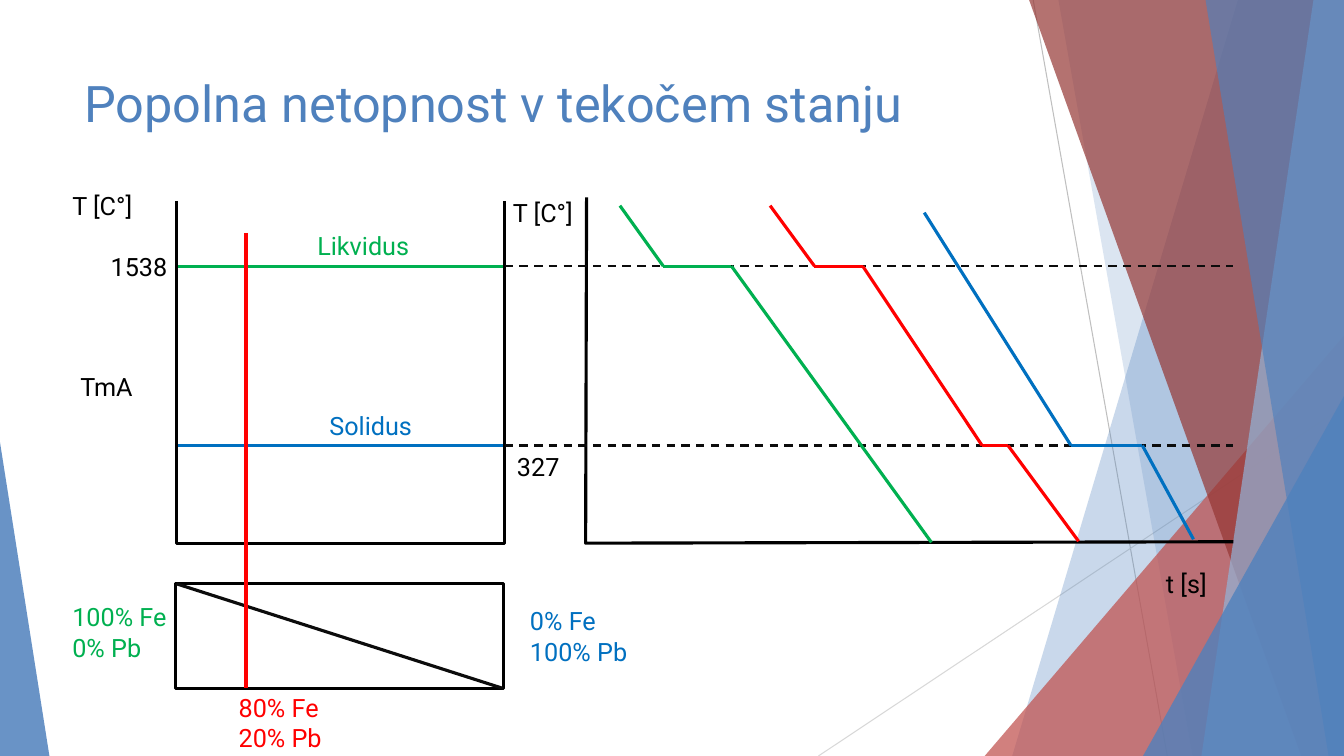
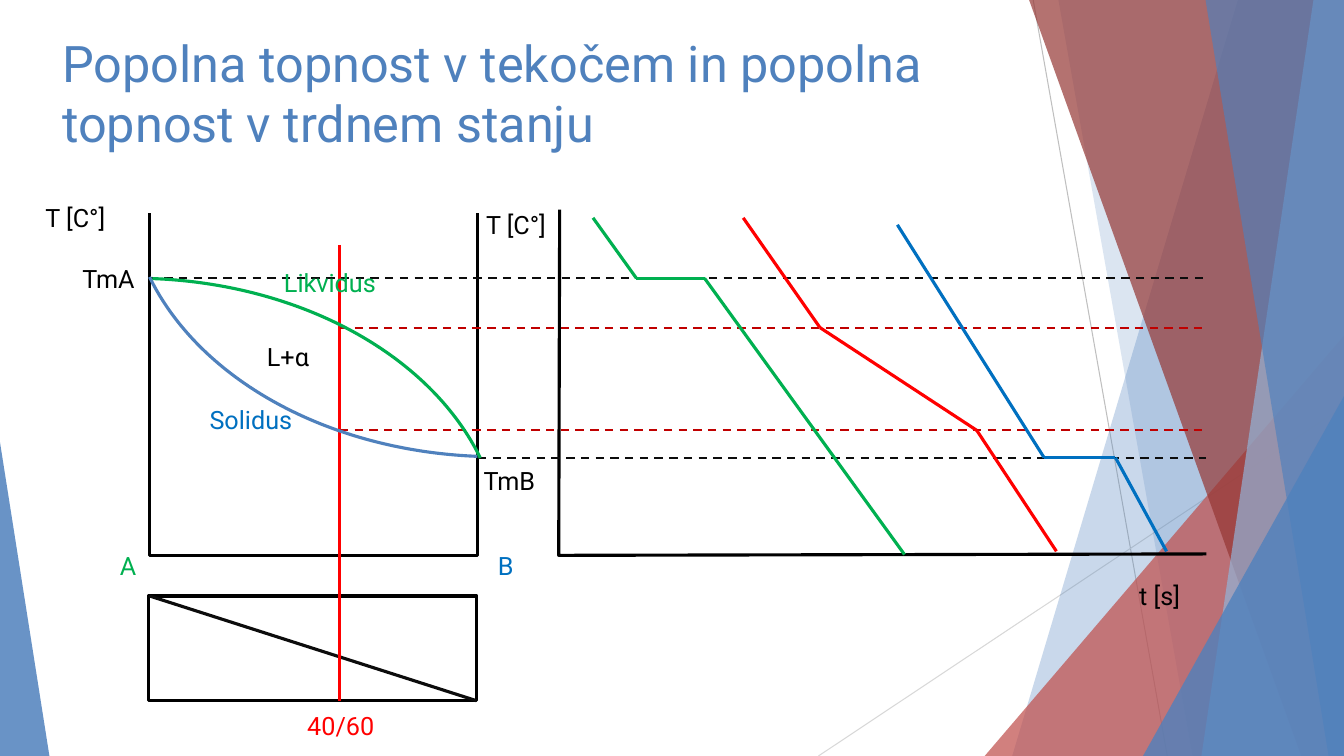
import itertools

import pptx
import pptx.dml.color
import pptx.enum.dml
import pptx.enum.shapes
import pptx.util
from lxml import etree

Pt = pptx.util.Pt
SHAPE = pptx.enum.shapes.MSO_SHAPE
DASH = pptx.enum.dml.MSO_LINE.DASH
DRAWING = "http://schemas.openxmlformats.org/drawingml/2006/main"

FONT = "Roboto"
WIDTH, HEIGHT = 960, 540
BLACK, INK, ACCENT = "000000", "0C0C0C", "4F81BD"
GREEN, BLUE, RED, DARK_RED = "00B050", "0070C0", "FF0000", "C00000"
THICK, MEDIUM, HAIR = 2.25, 1.5, 0.75

HAIRLINES = [
    ((738, 0), (833.8, HEIGHT), "BFBFBF"),
    ((WIDTH, 290.2), (584.6, HEIGHT), "D8D8D8"),
]
FACETS = [
    ("band", (884.2, 723), ACCENT, 30),
    ("band", (756, 851.8), ACCENT, 20),
    ("triangle", (703.4, 239.8, 256.6, 1), "C0504D", 72),
    ("band", (735.1, 929.5), "953734", 70),
    ("band", (938.2, 858.2), "93B3D7", 70),
    ("band", (861.1, 949), ACCENT, 65),
    ("triangle", (816.5, 283, 143.5, 1), ACCENT, 80),
    ("triangle", (0, 316, 35.3, 0), ACCENT, 85),
]

LEFT, RIGHT, TIME_END = 126, 360.5, 881
LIQUIDUS_Y, SOLIDUS_Y = 190.1, 318.2
MIX_TOP, MIX_BOTTOM = 417, 491.8
FRAME = [(LEFT, 143.5), (LEFT, 388), (RIGHT, 388), (RIGHT, 143.5)]
AXES = [(419, 141), (418.3, 388), (TIME_END, 387)]
AXIS_LABELS = [
    ("T [C°]", 44.6, 132.5, BLACK),
    ("T [C°]", 359.3, 137.5, BLACK),
    ("t [s]", 825.8, 402.5, BLACK),
]
COOLING_A = [(442.8, 146.9), (473.8, LIQUIDUS_Y), (522.5, LIQUIDUS_Y), (665.3, 387.4)]
COOLING_B = [(660.2, 151.9), (765, SOLIDUS_Y), (816, SOLIDUS_Y), (852.5, 385.2)]

SLIDES = [
    {
        "title": ("Popolna netopnost v tekočem stanju", 53.3, 48.2),
        "origin": (0, 0),
        "alloy_x": 175.7,
        "levels": [(LEFT + 1, LIQUIDUS_Y, GREEN), (LEFT + 1, SOLIDUS_Y, BLUE)],
        "dashes": [(RIGHT, LIQUIDUS_Y, INK), (RIGHT, SOLIDUS_Y, INK)],
        "arcs": [],
        "cooling": [
            (550.1, 146.9), (581.8, LIQUIDUS_Y), (616.3, LIQUIDUS_Y),
            (701.5, SOLIDUS_Y), (720, SOLIDUS_Y), (770.4, 386.6),
        ],
        "labels": [
            ("100% Fe\n0% Pb", 44.6, 426.2, GREEN),
            ("0% Fe\n100% Pb", 371.5, 429.1, BLUE),
            ("80% Fe\n20% Pb", 163.4, 491, RED),
            ("Likvidus", 219.6, 160.6, GREEN),
            ("Solidus", 228.2, 289.4, BLUE),
            ("1538", 72, 175.7, BLACK),
            ("TmA", 50.4, 261.4, BLACK),
            ("327", 362.2, 319, BLACK),
        ],
    },
    {
        "title": ("Popolna topnost v tekočem in popolna topnost v trdnem stanju", 37.4, 19.4),
        "origin": (-19.2, 8.7),
        "alloy_x": 262,
        "levels": [],
        "dashes": [
            (LEFT, LIQUIDUS_Y, INK), (RIGHT, SOLIDUS_Y, INK),
            (262, 225.3, DARK_RED), (262, 298.7, DARK_RED),
        ],
        "arcs": [(110.6, -69.9, 180, ACCENT), (-148.6, 190, 0, GREEN)],
        "cooling": [(550.1, 146.9), (604.9, 225.3), (716.9, 298.7), (773.8, 385.1)],
        "labels": [
            ("A", 97.7, 380.8, GREEN),
            ("B", 367.7, 380.8, BLUE),
            ("40/60", 231.6, 495.3, RED),
            ("TmA", 71, 175.6, BLACK),
            ("TmB", 357.6, 320.3, BLACK),
            ("L+α", 202.8, 231.8, BLACK),
            ("Solidus", 161.8, 276.4, BLUE),
            ("Likvidus", 215, 178.5, GREEN),
        ],
    },
]


def color(value):
    return pptx.dml.color.RGBColor.from_string(value)


def style(shape, fill=None, alpha=100, line=None):
    shape.shadow.inherit = False
    if fill:
        shape.fill.solid()
        shape.fill.fore_color.rgb = color(fill)
        for swatch in shape.element.spPr.iter("{%s}srgbClr" % DRAWING):
            etree.SubElement(swatch, "{%s}alpha" % DRAWING, val=str(alpha * 1000))
    else:
        shape.fill.background()
    if line:
        shape.line.color.rgb = color(line)
        shape.line.width = Pt(THICK)
    else:
        shape.line.fill.background()
    return shape


def add_outline(page, points, close):
    start, *rest = [(Pt(x), Pt(y)) for x, y in points]
    builder = page.shapes.build_freeform(*start)
    builder.add_line_segments(rest, close=close)
    return builder.convert_to_shape()


def add_preset(page, kind, x, y, width, height):
    return page.shapes.add_shape(kind, Pt(x), Pt(y), Pt(width), Pt(height))


def add_line(page, start, end, line, width=THICK, dashed=False):
    connector = page.shapes.add_connector(
        pptx.enum.shapes.MSO_CONNECTOR.STRAIGHT, *[Pt(value) for value in (*start, *end)])
    connector.line.color.rgb = color(line)
    connector.line.width = Pt(width)
    if dashed:
        connector.line.dash_style = DASH
    etree.SubElement(connector.element.spPr, "{%s}effectLst" % DRAWING)


def add_text(page, text, x, y, ink, width=94, height=29, size=18):
    box = page.shapes.add_textbox(Pt(x), Pt(y), Pt(width), Pt(height))
    box.text_frame.word_wrap = True
    box.text_frame.text = text
    for para in box.text_frame.paragraphs:
        for span in para.runs:
            span.font.name = FONT
            span.font.size = Pt(size)
            span.font.color.rgb = color(ink)


def add_backdrop(page):
    for start, end, line in HAIRLINES:
        add_line(page, start, end, line, HAIR)
    for kind, place, fill, alpha in FACETS:
        if kind == "band":
            top, bottom = place
            corners = [(top, 0), (WIDTH, 0), (WIDTH, HEIGHT), (bottom, HEIGHT)]
            facet = add_outline(page, corners, True)
        else:
            x, y, width, apex = place
            facet = add_preset(page, SHAPE.ISOSCELES_TRIANGLE, x, y, width, HEIGHT - y)
            facet.adjustments[0] = apex
        style(facet, fill, alpha)


def add_diagram(page, content):
    dx, dy = content["origin"]

    def at(x, y):
        return x + dx, y + dy

    for points in (FRAME, AXES):
        style(add_outline(page, [at(*point) for point in points], False), line=BLACK)
    mix = add_preset(page, SHAPE.RECTANGLE, *at(LEFT - 0.7, MIX_TOP),
                     RIGHT - LEFT, MIX_BOTTOM - MIX_TOP)
    style(mix, line=BLACK)
    add_line(page, at(LEFT, MIX_TOP), at(RIGHT - 1, MIX_BOTTOM), INK)
    for x, y, line in content["levels"]:
        add_line(page, at(x, y), at(RIGHT - 1, y), line)
    alloy_x = content["alloy_x"]
    add_line(page, at(alloy_x, 166.3), at(alloy_x, MIX_BOTTOM), RED)
    for x, y, line in content["dashes"]:
        add_line(page, at(x, y), at(TIME_END, y), line, MEDIUM, True)
    for points, line in ((COOLING_A, GREEN), (content["cooling"], RED), (COOLING_B, BLUE)):
        for start, end in itertools.pairwise(points):
            add_line(page, at(*start), at(*end), line)
    for x, y, rotation, line in content["arcs"]:
        arc = style(add_preset(page, SHAPE.ARC, *at(x, y), 526.3, 387.4), line=line)
        arc.adjustments[0] = 164.403
        arc.adjustments[1] = 207.134
        arc.rotation = rotation
    for text, x, y, ink in AXIS_LABELS + content["labels"]:
        add_text(page, text, *at(x, y), ink, height=29 + 22 * text.count("\n"))


def main():
    deck = pptx.Presentation()
    deck.slide_width, deck.slide_height = Pt(WIDTH), Pt(HEIGHT)
    for content in SLIDES:
        page = deck.slides.add_slide(deck.slide_layouts[6])
        add_backdrop(page)
        add_text(page, *content["title"], ACCENT, width=676.8, height=103.7, size=36)
        add_diagram(page, content)
    deck.save("out.pptx")


if __name__ == "__main__":
    main()
